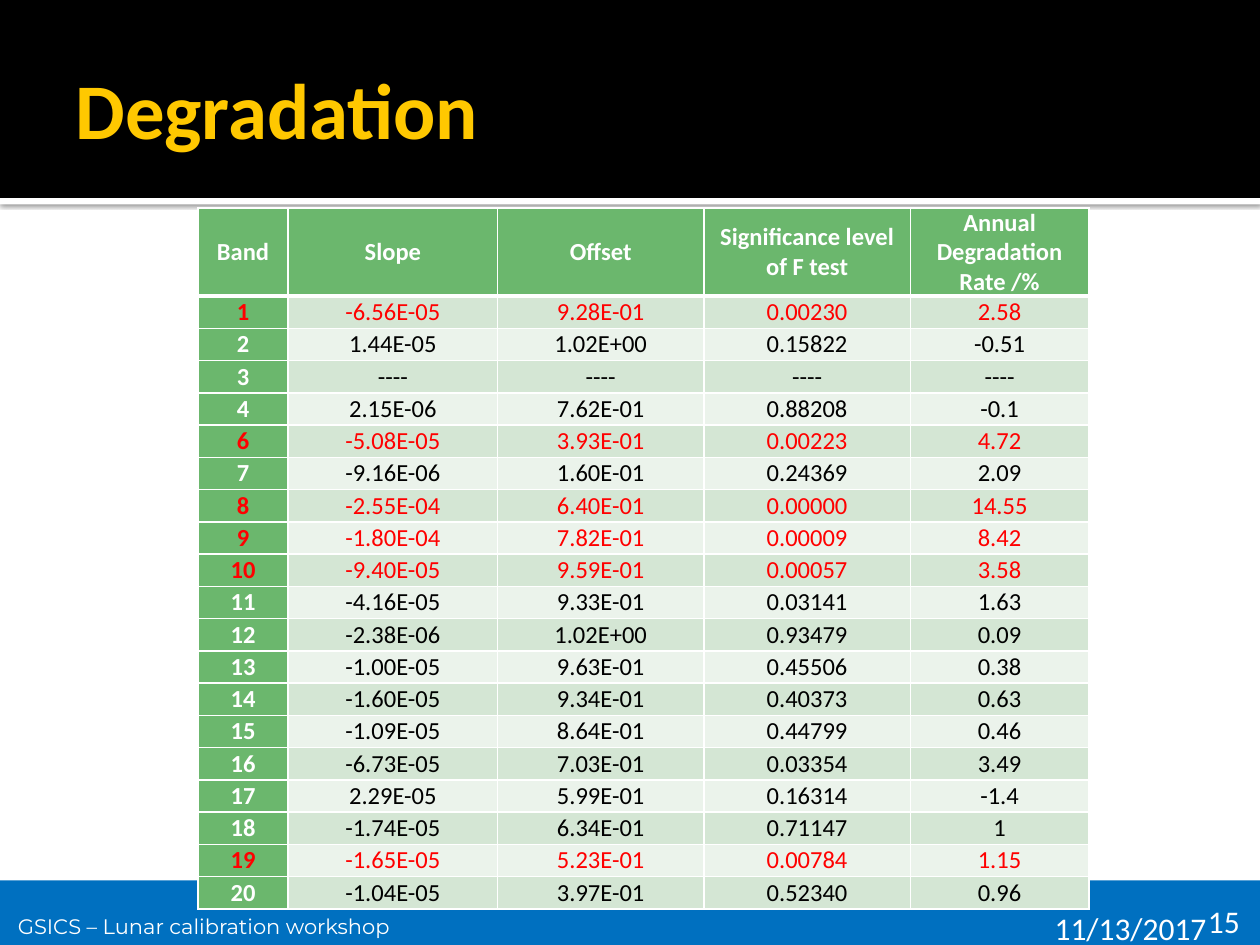
from lxml import etree
from pptx import Presentation
from pptx import util as u
from pptx.dml import color
from pptx.enum import shapes, text
from pptx.oxml import ns, parse_xml

COLORS = {"white": "FFFFFF", "black": "000000", "footer": "0070C0", "title": "FFC800",
          "green": "6BB76D", "odd": "D4E6D4", "even": "EBF3EB", "red": "FF0000"}
HEADER = ["Band", "Slope", "Offset", "Significance level of F test", "Annual Degradation Rate /%"]
BANDS = """
1 -6.56E-05 9.28E-01 0.00230 2.58
2 1.44E-05 1.02E+00 0.15822 -0.51
3 ---- ---- ---- ----
4 2.15E-06 7.62E-01 0.88208 -0.1
6 -5.08E-05 3.93E-01 0.00223 4.72
7 -9.16E-06 1.60E-01 0.24369 2.09
8 -2.55E-04 6.40E-01 0.00000 14.55
9 -1.80E-04 7.82E-01 0.00009 8.42
10 -9.40E-05 9.59E-01 0.00057 3.58
11 -4.16E-05 9.33E-01 0.03141 1.63
12 -2.38E-06 1.02E+00 0.93479 0.09
13 -1.00E-05 9.63E-01 0.45506 0.38
14 -1.60E-05 9.34E-01 0.40373 0.63
15 -1.09E-05 8.64E-01 0.44799 0.46
16 -6.73E-05 7.03E-01 0.03354 3.49
17 2.29E-05 5.99E-01 0.16314 -1.4
18 -1.74E-05 6.34E-01 0.71147 1
19 -1.65E-05 5.23E-01 0.00784 1.15
20 -1.04E-05 3.97E-01 0.52340 0.96
"""
rows = [HEADER] + [line.split() for line in BANDS.strip().splitlines()]


def write(tf, content, size=14, color_name="white", bold=False, font="Calibri",
          align=text.PP_ALIGN.LEFT, spacing=None):
    p = tf.paragraphs[0]
    p.alignment = align
    p.line_spacing = spacing
    r = p.add_run()
    r.text = content
    r.font.name, r.font.size, r.font.bold = font, u.Pt(size), bold
    r.font.color.rgb = color.RGBColor.from_string(COLORS[color_name])


def set_borders(cell, bottom=1, top=1):
    tc_pr = cell._tc.get_or_add_tcPr()
    widths = {"lnL": 1, "lnR": 1, "lnT": top, "lnB": bottom}
    for i, (tag, width) in enumerate(widths.items()):
        ln = etree.Element(ns.qn("a:" + tag), w=str(u.Pt(width)))
        fill = etree.SubElement(ln, ns.qn("a:solidFill"))
        etree.SubElement(fill, ns.qn("a:srgbClr"), val=COLORS["white"])
        tc_pr.insert(i, ln)


prs = Presentation()
prs.slide_width, prs.slide_height = u.Cm(25.4), u.Cm(19.05)
s = prs.slides.add_slide(prs.slide_layouts[5])

# Header strip, header bar and footer bar
bars = []
for top, height, name in [(3.99, 0.13, "white"), (0, 3.99, "black"), (17.75, 1.3, "footer")]:
    sp = s.shapes.add_shape(shapes.MSO_SHAPE.RECTANGLE, 0, u.Cm(top), prs.slide_width, u.Cm(height))
    sp.shadow.inherit = False
    sp.fill.solid()
    sp.fill.fore_color.rgb = color.RGBColor.from_string(COLORS[name])
    sp.line.fill.background()
    bars.append(sp)
effects = bars[0]._element.spPr.find(ns.qn("a:effectLst"))
effects.append(parse_xml(
    f'<a:outerShdw {ns.nsdecls("a")} blurRad="{u.Pt(2.5)}" dist="{u.Pt(0.8)}" dir="5400000" '
    f'algn="t" rotWithShape="0"><a:srgbClr val="{COLORS["black"]}"><a:alpha val="60000"/>'
    '</a:srgbClr></a:outerShdw>'))

# Page number, date and workshop name
for left, top, width, height, content, fmt in [
        (24.1, 18.06, 1.8, 0.76, "15", {"size": 18}),
        (21.01, 18.21, 5.92, 0.76, "11/13/2017", {"size": 18}),
        (0.11, 18.19, 15, 0.84, "GSICS – Lunar calibration workshop",
         {"size": 12, "font": "Montserrat", "spacing": 1.2})]:
    tf = s.shapes.add_textbox(u.Cm(left), u.Cm(top), u.Cm(width), u.Cm(height)).text_frame
    tf.word_wrap = True
    write(tf, content, **fmt)

# Title, brought in front of the header bar
title = s.shapes.title
title.left, title.top, title.width, title.height = u.Cm(1.27), u.Cm(0.43), u.Cm(22.86), u.Cm(3.48)
tf = title.text_frame
tf.auto_size = text.MSO_AUTO_SIZE.NONE
tf.vertical_anchor = text.MSO_ANCHOR.MIDDLE
tf.margin_left, tf.margin_right = u.Cm(0.25), u.Cm(0.13)
write(tf, "Degradation", size=45, color_name="title", bold=True)
bars[-1]._element.addnext(title._element)

# Degradation table: bands with significance below 0.01 are red
col_widths = [1.82, 4.22, 4.16, 4.16, 3.6]
header_height, row_height = 1.78, 0.65
table = s.shapes.add_table(
    len(rows), len(HEADER), u.Cm(3.99), u.Cm(4.19), u.Cm(sum(col_widths)),
    u.Cm(header_height + row_height * (len(rows) - 1))).table
for col, width in zip(table.columns, col_widths):
    col.width = u.Cm(width)
for i, values in enumerate(rows):
    table.rows[i].height = u.Cm(row_height if i else header_height)
    significant = i > 0 and values[3] != "----" and float(values[3]) < 0.01
    for j, value in enumerate(values):
        heading = i == 0 or j == 0
        cell = table.cell(i, j)
        cell.vertical_anchor = text.MSO_ANCHOR.MIDDLE
        cell.margin_left = cell.margin_right = u.Cm(0.18)
        cell.margin_top = cell.margin_bottom = 0
        cell.fill.solid()
        fill_name = "green" if heading else "odd" if i % 2 else "even"
        cell.fill.fore_color.rgb = color.RGBColor.from_string(COLORS[fill_name])
        set_borders(cell, bottom=1 if i else 3, top=3 if i == 1 else 1)
        write(cell.text_frame, value, bold=heading, align=text.PP_ALIGN.CENTER,
              color_name="red" if significant else "white" if heading else "black")

prs.save("out.pptx")
